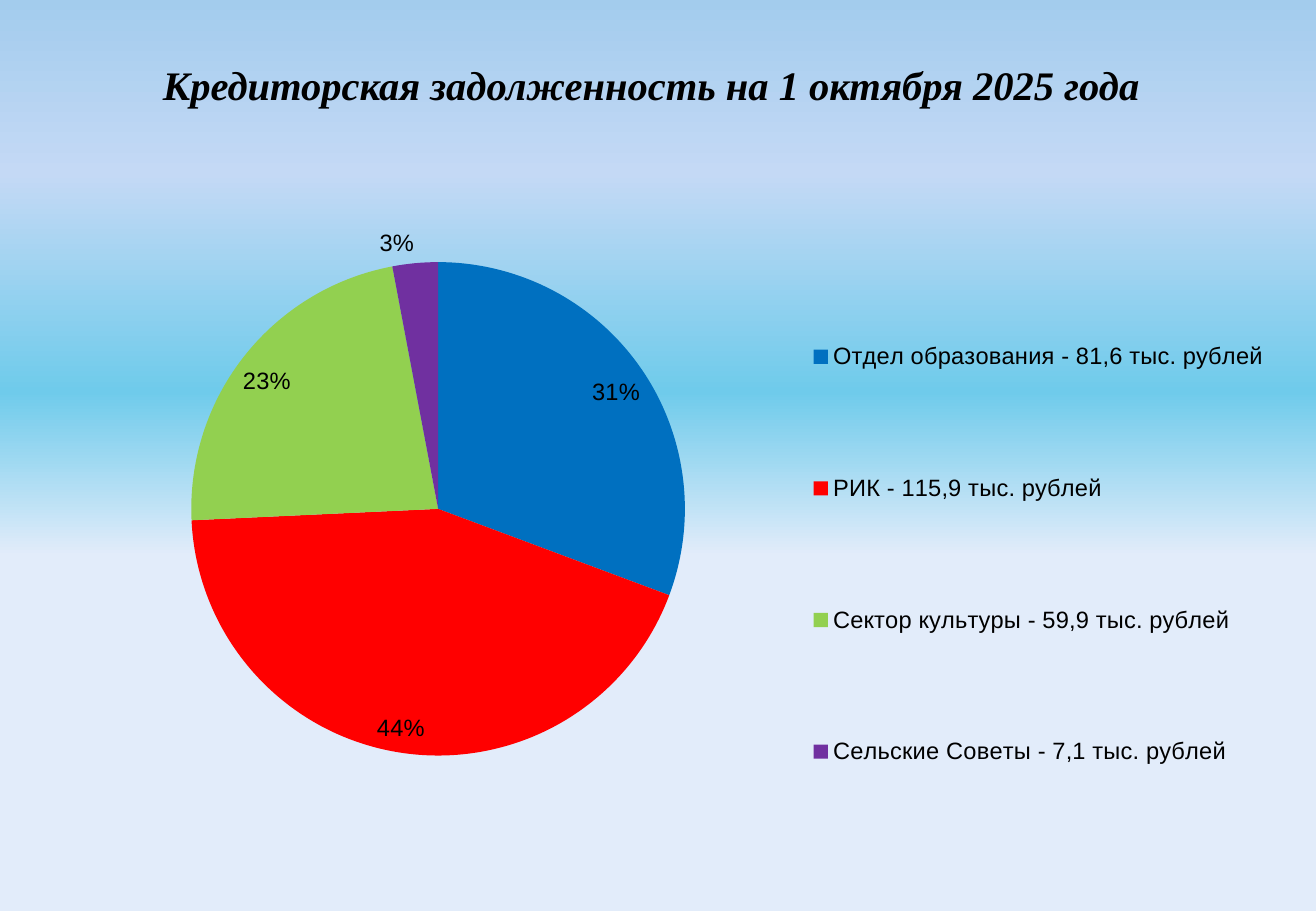
from lxml.etree import SubElement as Sub
from pptx import Presentation
from pptx.chart.data import CategoryChartData as Data
from pptx.dml.color import RGBColor
from pptx.enum.chart import XL_CHART_TYPE as Kind, XL_LABEL_POSITION as Place, XL_LEGEND_POSITION as Side
from pptx.enum.text import MSO_ANCHOR as Anchor, PP_ALIGN as Align
from pptx.oxml.ns import qn
from pptx.util import Inches, Pt

WIDE, HIGH = 10.83, 7.5
SKY = [(0, "A3CCED", 100), (19, "C4D9F5", 100), (43, "6FCBEB", 93),
       (61, "E2ECFA", 100), (84, "E2ECFA", 100)]
DEBTS = [("Отдел образования - 81,6 тыс. рублей", 31, "0070C0"),
         ("РИК - 115,9 тыс. рублей", 44, "FF0000"),
         ("Сектор культуры - 59,9 тыс. рублей", 23, "92D050"),
         ("Сельские Советы - 7,1 тыс. рублей", 3, "7030A0")]


def shade(color, code):
    color.rgb = RGBColor.from_string(code)


def style(font, size, name="Arial"):
    font.size, font.name = Pt(size), name
    shade(font.color, "000000")


def paint_sky(slide):
    slide.background.fill.gradient()
    grad = slide._element.find(".//" + qn("a:gradFill"))
    for part in list(grad):
        grad.remove(part)
    stops = Sub(grad, qn("a:gsLst"))
    for share, code, alpha in SKY:
        stop = Sub(stops, qn("a:gs"), pos=str(share * 1000))
        tint = Sub(stop, qn("a:srgbClr"), val=code)
        if alpha < 100:
            Sub(tint, qn("a:alpha"), val=str(alpha * 1000))
    Sub(grad, qn("a:lin"), ang="5400000", scaled="0")


def add_title(slide, box, text):
    title = slide.shapes.title
    title.left, title.top, title.width, title.height = map(Inches, box)
    frame = title.text_frame
    frame.margin_left = Inches(0.59)
    frame.vertical_anchor = Anchor.MIDDLE
    line = frame.paragraphs[0]
    line.alignment = Align.LEFT
    run = line.add_run()
    run.text = text
    style(run.font, 24, "Times New Roman")
    run.font.bold = run.font.italic = True


def set_layout(part, box, inner=False):
    """Place a chart part by shares of the chart's size."""
    layout = part.find(qn("c:layout"))
    if layout is None:
        layout = part.makeelement(qn("c:layout"))
        if inner:
            part.insert(0, layout)
        else:
            part.find(qn("c:legendPos")).addnext(layout)
    for old in list(layout):
        layout.remove(old)
    manual = Sub(layout, qn("c:manualLayout"))
    if inner:
        Sub(manual, qn("c:layoutTarget"), val="inner")
    for key in ("xMode", "yMode"):
        Sub(manual, qn("c:" + key), val="edge")
    for key, share in zip("xywh", box):
        Sub(manual, qn("c:" + key), val=str(share))


def explode(series):
    """Pull slices apart by default, but keep each of these in place."""
    node = series._element
    burst = node.makeelement(qn("c:explosion"), val="25")
    node.find(qn("c:dPt")).addprevious(burst)
    for point in node.findall(qn("c:dPt")):
        still = point.makeelement(qn("c:explosion"), val="0")
        point.find(qn("c:spPr")).addprevious(still)


def add_labels(series):
    labels = series.data_labels
    labels.show_percentage = True
    labels.show_value = False
    labels.number_format, labels.number_format_is_linked = "0%", False
    labels.position = Place.BEST_FIT
    style(labels.font, 14)
    # The thinnest slice has its label outside.
    thin = series.points[len(DEBTS) - 1].data_label
    style(thin.font, 14)
    thin.position = Place.OUTSIDE_END
    node = series._element.find(".//" + qn("c:dLbl"))
    node.find(qn("c:showVal")).set("val", "0")
    node.find(qn("c:showPercent")).set("val", "1")


def add_pie(slide, box):
    data = Data(number_format="#,##0.0")
    data.categories = [name for name, _, _ in DEBTS]
    data.add_series("Series 1", [share for _, share, _ in DEBTS])
    chart = slide.shapes.add_chart(Kind.PIE, *map(Inches, box), data).chart
    chart.has_title = False
    style(chart.font, 10)

    plot = chart.plots[0]
    plot.vary_by_categories = True
    series = plot.series[0]
    for i, (_, _, code) in enumerate(DEBTS):
        fill = series.points[i].format.fill
        fill.solid()
        shade(fill.fore_color, code)
    explode(series)
    add_labels(series)

    chart.has_legend = True
    legend = chart.legend
    legend.position = Side.RIGHT
    legend.include_in_layout = False
    style(legend.font, 14)
    set_layout(legend._element, (0.612, 0.14, 0.37, 0.815))
    area = chart._chartSpace.find(".//" + qn("c:plotArea"))
    set_layout(area, (0.064, 0.091, 0.529, 0.796), inner=True)


def main():
    deck = Presentation()
    deck.slide_width, deck.slide_height = Inches(WIDE), Inches(HIGH)
    slide = deck.slides.add_slide(deck.slide_layouts[5])
    paint_sky(slide)
    add_title(slide, (0.75, 0.44, 9.32, 0.5),
              "Кредиторская задолженность на 1 октября 2025 года")
    add_pie(slide, (0.14, 1.07, 10.55, 6.38))
    deck.save("out.pptx")


if __name__ == "__main__":
    main()
